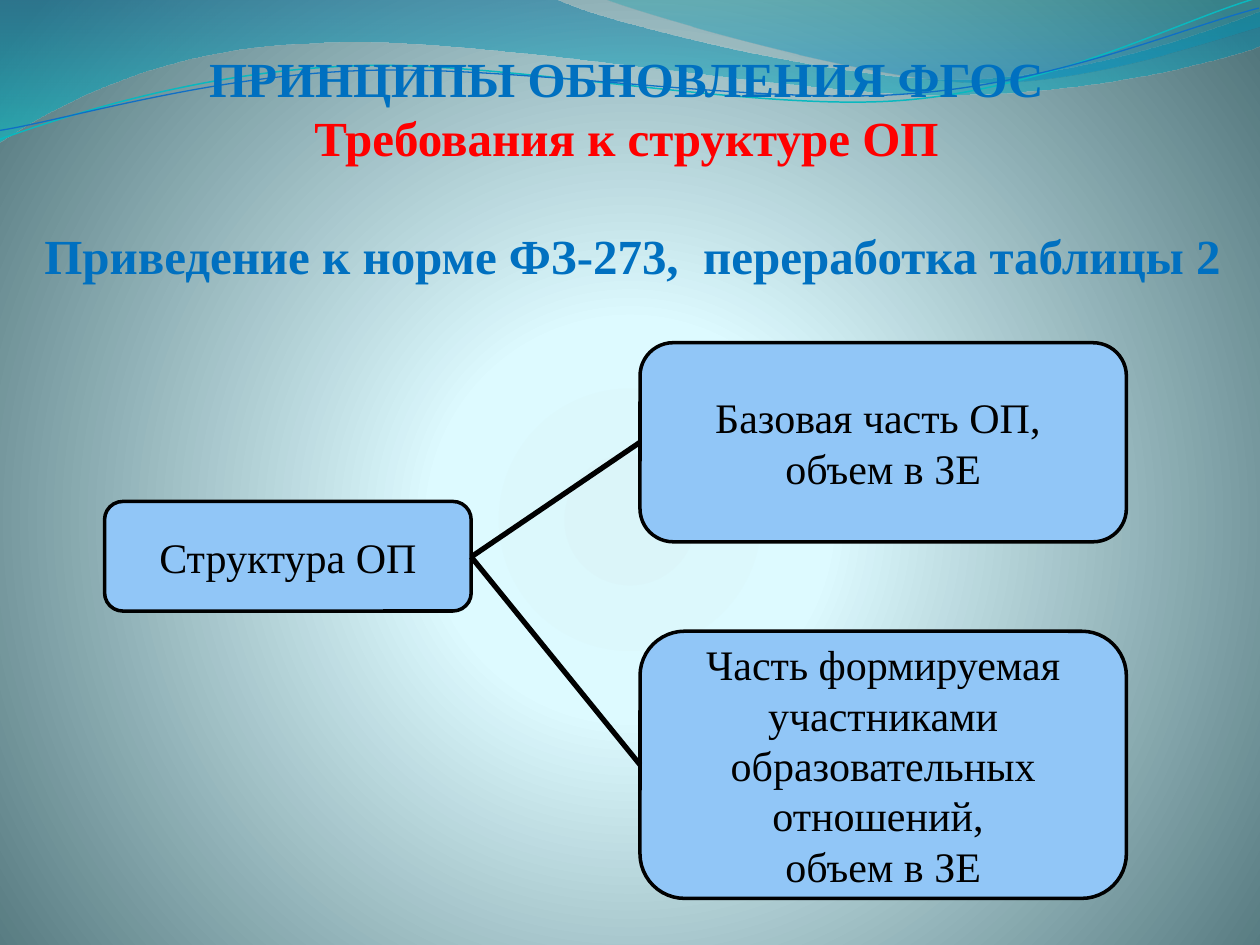
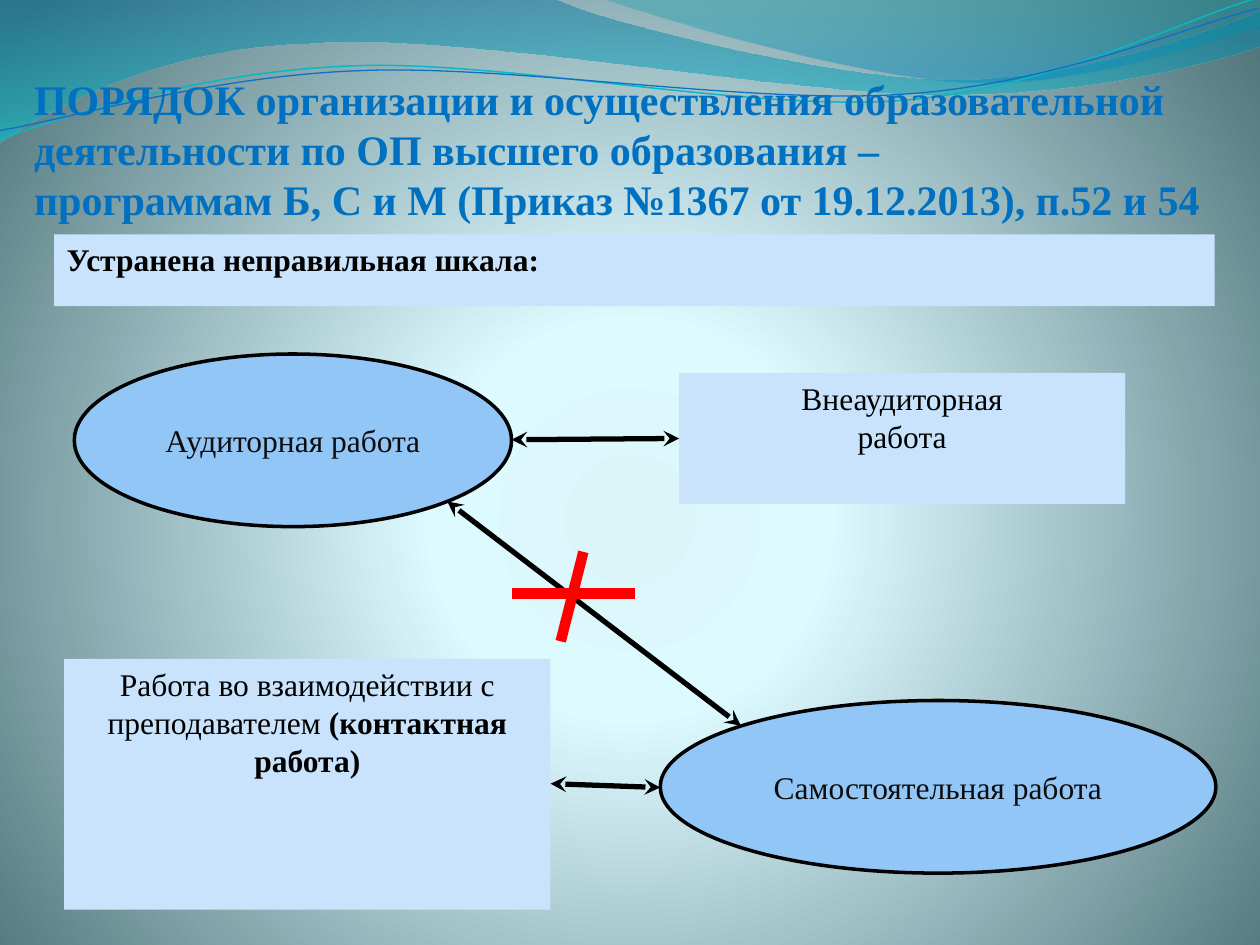
from dataclasses import dataclass

from lxml import etree
from pptx import Presentation
from pptx import util as u
from pptx.dml.color import RGBColor
from pptx.enum import shapes, text
from pptx.oxml import ns, parse_xml

PX = 9144  # EMU in one px, 100 px to the inch
FONT = "Times New Roman"
COLORS = {
    "title": "0070C0", "red": "FF0000", "black": "000000", "ink": "0D0D0D",
    "box": "91C6F7", "panel": "C8E3FB",
    "glow": "DBF5F9", "halo": "DDFAFF", "edge": "52767C",
    "wave_top": "0074A1", "wave_low": "00C6CF",
    "crest_top": "00A1A9", "crest_low": "008BBF",
    "cyan": "0AB8BF", "blue": "0F6FC6",
}
ROUND = shapes.MSO_SHAPE.ROUNDED_RECTANGLE
OVAL = shapes.MSO_SHAPE.OVAL
RECT = shapes.MSO_SHAPE.RECTANGLE
LEFT, CENTER = text.PP_ALIGN.LEFT, text.PP_ALIGN.CENTER
TOP, MIDDLE = text.MSO_ANCHOR.TOP, text.MSO_ANCHOR.MIDDLE
LINEAR = '<a:lin ang="5400000" scaled="1"/>'
CIRCLE = ('<a:path path="circle"><a:fillToRect l="10000" t="110000" '
          'r="10000" b="100000"/></a:path>')


@dataclass
class Curve:
    """Outline in px; a step holds 2 numbers for a line, 6 for a Bezier."""
    start: tuple
    steps: list
    stops: tuple = ()  # (position %, colour, opacity %)
    color: str = ""
    width: float = 0
    rotation: float = 0


@dataclass
class Box:
    kind: int
    at: tuple
    lines: list
    size: int
    ink: str = "black"
    bold: bool = False
    bold_tail: str = ""
    align: int = CENTER


@dataclass
class Link:
    start: tuple
    end: tuple
    color: str = "black"
    width: int = 3
    arrows: bool = False


CURVES = [
    Curve((0, 0), [(440, -1), (476, 17, 664, 63, 758, 63),
                   (853, 63, 958, 26, 1000, 9), (1001, 36),
                   (983, 44, 870, 76, 746, 75), (622, 75, 382, 28, 257, 34),
                   (129, 36, 46, 83, -1, 113)],
          stops=((0, "wave_top", 45), (100, "wave_low", 55))),
    Curve((479, -1), [(509, 11, 682, 62, 769, 65),
                      (856, 69, 961, 32, 1000, 21), (1000, 0)],
          stops=((0, "crest_top", 30), (80, "crest_low", 45))),
    Curve((-2, 87), [(47, 72, 158, 41, 278, 42), (396, 42, 591, 93, 712, 90),
                     (832, 87, 940, 36, 1000, 22)],
          color="cyan", width=0.85, rotation=357.3),
    Curve((-2, 80), [(46, 75, 164, 45, 283, 46), (403, 46, 596, 88, 716, 85),
                     (835, 83, 942, 42, 1001, 30)],
          color="blue", width=0.75, rotation=357.3),
]

STRUCTURE = [
    Box(ROUND, (83, 398, 291, 87), ["Структура ОП"], 24),
    Box(ROUND, (508, 272, 386, 158), ["Базовая часть ОП, ", "объем в ЗЕ"], 24),
    Box(ROUND, (508, 501, 386, 212),
        ["Часть формируемая участниками образовательных отношений, ",
         "объем в ЗЕ"], 24),
]
STRUCTURE_LINKS = [Link((374, 442), (508, y)) for y in (351, 607)]

WORK = [
    Box(RECT, (43, 186, 921, 57), ["Устранена неправильная шкала:"], 18,
        bold=True, align=LEFT),
    Box(OVAL, (59, 281, 347, 137), ["Аудиторная работа"], 18, "ink"),
    Box(RECT, (539, 296, 354, 104), ["Внеаудиторная", "работа"], 18),
    Box(RECT, (51, 523, 386, 199),
        ["Работа во взаимодействии с преподавателем "], 18,
        bold_tail="(контактная работа)"),
    Box(OVAL, (524, 556, 441, 137), ["Самостоятельная работа"], 18, "ink"),
]
WORK_LINKS = [
    Link((406, 349), (539, 348), arrows=True),
    Link((524, 625), (437, 622), arrows=True),
    Link((355, 398), (588, 576), arrows=True),
    Link((463, 438), (445, 509), "red", 6),
    Link((504, 471), (406, 471), "red", 6),
]


def px(*values: int) -> list:
    return [u.Emu(v * PX) for v in values]


def rgb(name: str) -> RGBColor:
    return RGBColor.from_string(COLORS[name])


def set_gradient(fill, holder, stops: tuple, direction: str) -> None:
    """Give the fill found inside the holder element its stops and direction."""
    fill.gradient()
    marks = "".join(
        f'<a:gs pos="{pos * 1000}"><a:srgbClr val="{COLORS[name]}">'
        f'<a:alpha val="{alpha * 1000}"/></a:srgbClr></a:gs>'
        for pos, name, alpha in stops)
    old = holder.find(".//" + ns.qn("a:gradFill"))
    new = parse_xml(f'<a:gradFill {ns.nsdecls("a")} rotWithShape="1">'
                    f'<a:gsLst>{marks}</a:gsLst>{direction}</a:gradFill>')
    old.getparent().replace(old, new)


def bend(sp, steps: list) -> None:
    """Join the straight pieces of each six-number step into one Bezier."""
    pieces = iter(sp.element.findall(".//" + ns.qn("a:lnTo")))
    for step in steps:
        first, *others = [next(pieces) for _ in range(len(step) // 2)]
        if others:
            bezier = etree.Element(ns.qn("a:cubicBezTo"))
            first.addprevious(bezier)
            for piece in (first, *others):
                bezier.append(piece[0])
                piece.getparent().remove(piece)


def add_curve(slide, curve: Curve):
    builder = slide.shapes.build_freeform(*px(*curve.start))
    points = [tuple(px(*step[i:i + 2]))
              for step in curve.steps for i in range(0, len(step), 2)]
    builder.add_line_segments(points, close=bool(curve.stops))
    sp = builder.convert_to_shape()
    bend(sp, curve.steps)
    sp.rotation = curve.rotation
    sp.shadow.inherit = False
    if curve.stops:
        set_gradient(sp.fill, sp.element, curve.stops, LINEAR)
        sp.line.fill.background()
    else:
        sp.fill.background()
        sp.line.color.rgb = rgb(curve.color)
        sp.line.width = u.Pt(curve.width)
    return sp


def decorate(master, slide) -> None:
    """Set the shared background and move the waves into the master."""
    set_gradient(master.background.fill, master.element,
                 ((0, "glow", 100), (25, "halo", 100), (100, "edge", 100)),
                 CIRCLE)
    tree = master.shapes.element
    for i, curve in enumerate(CURVES):
        tree.insert(2 + i, add_curve(slide, curve).element)


def format_run(r, size: int, color: str, bold: bool) -> None:
    r.font.name = FONT
    r.font.size = u.Pt(size)
    r.font.bold = bold
    r.font.color.rgb = rgb(color)


def set_title(slide, at: tuple, lines: list, size: int, align: int) -> None:
    """Lines are (text, colour, points of space before)."""
    sp = slide.shapes.title
    sp.left, sp.top, sp.width, sp.height = px(*at)
    tf = sp.text_frame
    tf.auto_size = text.MSO_AUTO_SIZE.NONE
    tf.word_wrap = True
    tf.vertical_anchor = text.MSO_ANCHOR.BOTTOM
    tf.margin_left = tf.margin_right = tf.margin_bottom = 0
    tf.margin_top = px(5)[0]
    tf.text = "\n".join(line for line, _, _ in lines)
    for p, (_, color, gap) in zip(tf.paragraphs, lines):
        p.alignment = align
        if gap:
            p.space_before = u.Pt(gap)
        for r in p.runs:
            format_run(r, size, color, True)


def add_box(slide, box: Box) -> None:
    sp = slide.shapes.add_shape(box.kind, *px(*box.at))
    sp.shadow.inherit = False
    panel = box.kind == RECT
    sp.fill.solid()
    sp.fill.fore_color.rgb = rgb("panel" if panel else "box")
    if panel:
        sp.line.fill.background()
    else:
        sp.line.color.rgb = rgb("black")
        sp.line.width = u.Pt(2)
    tf = sp.text_frame
    tf.word_wrap = True
    tf.vertical_anchor = TOP if panel else MIDDLE
    tf.text = "\n".join(box.lines)
    for p in tf.paragraphs:
        p.alignment = box.align
        for r in p.runs:
            format_run(r, box.size, box.ink, box.bold)
    if box.bold_tail:
        r = tf.paragraphs[-1].add_run()
        r.text = box.bold_tail
        format_run(r, box.size, box.ink, True)


def add_link(slide, link: Link) -> None:
    cx = slide.shapes.add_connector(shapes.MSO_CONNECTOR.STRAIGHT,
                                    *px(*link.start, *link.end))
    cx.line.color.rgb = rgb(link.color)
    cx.line.width = u.Pt(link.width)
    if link.arrows:
        ln = cx.line._get_or_add_ln()
        for end in ("a:headEnd", "a:tailEnd"):
            etree.SubElement(ln, ns.qn(end), type="stealth")
    etree.SubElement(cx.element.spPr, ns.qn("a:effectLst"))


def fill_slide(slide, boxes: list, links: list) -> None:
    for box in boxes:
        add_box(slide, box)
    for link in links:
        add_link(slide, link)


def main() -> None:
    prs = Presentation()
    prs.slide_width, prs.slide_height = px(1000, 750)
    layout = prs.slide_layouts[5]

    s = prs.slides.add_slide(layout)
    decorate(prs.slide_master, s)
    set_title(s, (12, 24, 980, 202), [
        ("ПРИНЦИПЫ ОБНОВЛЕНИЯ ФГОС ", "title", 0),
        ("Требования к структуре ОП ", "red", 0),
        ("Приведение к норме ФЗ-273,  переработка таблицы 2", "title", 34),
    ], 28, CENTER)
    fill_slide(s, STRUCTURE, STRUCTURE_LINKS)

    s = prs.slides.add_slide(layout)
    set_title(s, (27, 28, 953, 150), [
        ("ПОРЯДОК организации и осуществления образовательной деятельности "
         "по ОП высшего образования – \v"
         "программам Б, С и М (Приказ №1367 от 19.12.2013), п.52 и 54",
         "title", 0),
    ], 24, LEFT)
    fill_slide(s, WORK, WORK_LINKS)

    prs.save("out.pptx")


if __name__ == "__main__":
    main()
